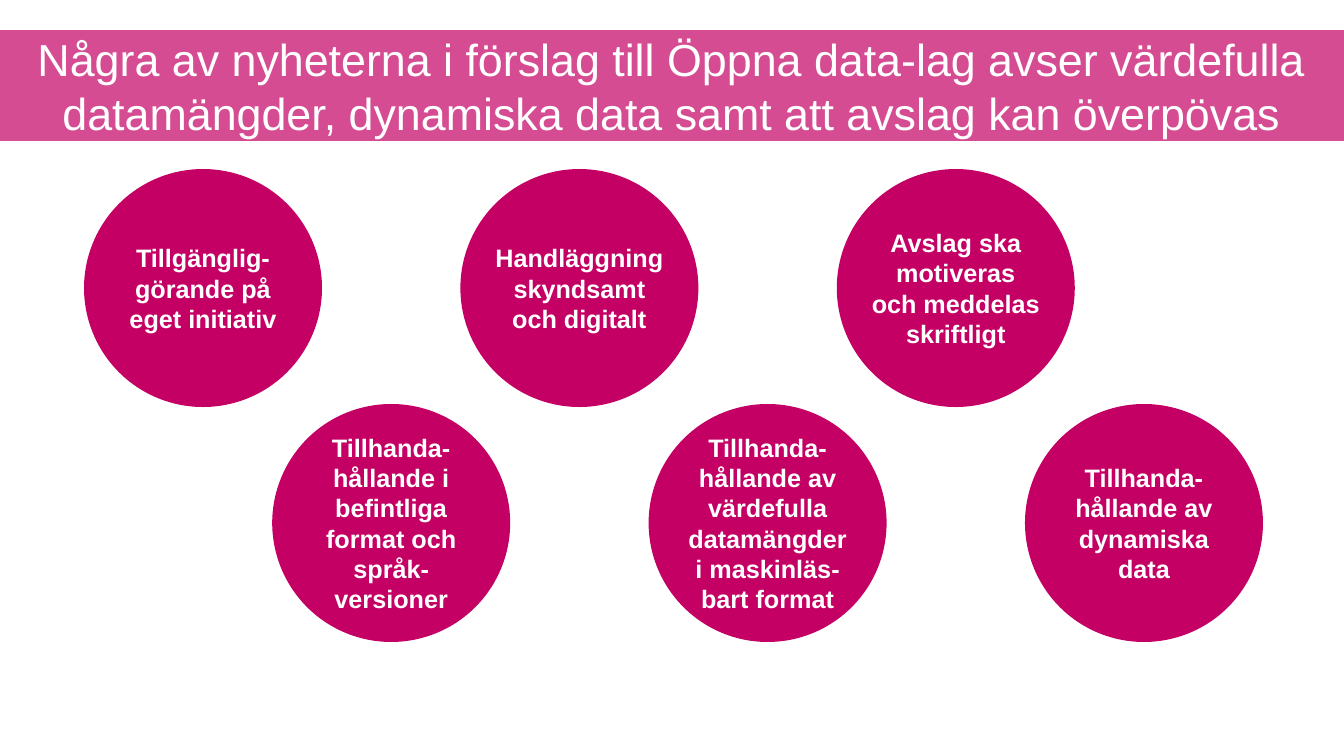
from lxml import etree
from pptx import Presentation
from pptx import util as u
from pptx.dml.color import RGBColor
from pptx.enum import shapes, text
from pptx.oxml import ns

PX = 914400 / 100.8
MAGENTA = RGBColor(0xC4, 0x00, 0x64)
WHITE = RGBColor(0xFF, 0xFF, 0xFF)

TITLE = ("Några av nyheterna i förslag till Öppna data-lag avser värdefulla "
         "datamängder, dynamiska data samt att avslag kan överpövas")

# Circles from left to right, alternating between upper and lower row
PROPOSALS = [
    "Tillgänglig-görande på eget initiativ",
    "Tillhanda-hållande i befintliga format och språk-versioner",
    "Handläggning skyndsamt och digitalt",
    "Tillhanda-hållande av värdefulla datamängder i maskinläs-bart format",
    "Avslag ska motiveras och meddelas skriftligt",
    "Tillhanda-hållande av dynamiska data",
]
ROW_TOPS = (169, 404)
DIAMETER = 238
FIRST_LEFT, LAST_LEFT = 84, 1025


def px(length):
    return u.Emu(round(length * PX))


def add_filled_shape(slide, kind, box, wording, margins, font_format):
    """Add a magenta shape with centred white text; margins are (side, top and bottom)."""
    shape = slide.shapes.add_shape(kind, *map(px, box))
    shape.shadow.inherit = False
    shape.fill.solid()
    shape.fill.fore_color.rgb = MAGENTA
    shape.line.fill.background()

    frame = shape.text_frame
    side, vertical = map(px, margins)
    frame_format = {
        "word_wrap": True,
        "vertical_anchor": text.MSO_ANCHOR.MIDDLE,
        "margin_left": side,
        "margin_right": side,
        "margin_top": vertical,
        "margin_bottom": vertical,
    }
    for name, value in frame_format.items():
        setattr(frame, name, value)

    paragraph = frame.paragraphs[0]
    paragraph.alignment = text.PP_ALIGN.CENTER
    run = paragraph.add_run()
    run.text = wording
    run.font.color.rgb = WHITE
    for name, value in {"name": "Arial", **font_format}.items():
        setattr(run.font, name, value)
    return shape


def set_opacity(shape, percent):
    color = shape.fill._xPr.find(ns.qn("a:solidFill"))[0]
    etree.SubElement(color, ns.qn("a:alpha"), val=str(percent * 1000))


def add_proposal_circle(slide, index, wording):
    left = FIRST_LEFT + (LAST_LEFT - FIRST_LEFT) * index / (len(PROPOSALS) - 1)
    box = (left, ROW_TOPS[index % 2], DIAMETER, DIAMETER)
    add_filled_shape(slide, shapes.MSO_SHAPE.OVAL, box, wording, (0, 5),
                     {"size": u.Pt(18), "bold": True})


def add_title_banner(slide):
    banner = add_filled_shape(slide, shapes.MSO_SHAPE.RECTANGLE, (-22, 29, 1388, 113),
                              TITLE, (55, 0), {"size": u.Pt(32), "bold": False})
    set_opacity(banner, 70)
    banner.line.color.rgb = WHITE
    banner.line.width = u.Pt(2)


def main():
    presentation = Presentation()
    presentation.slide_width, presentation.slide_height = px(1344), px(756)
    slide = presentation.slides.add_slide(presentation.slide_layouts[6])

    # Proposals in two staggered rows
    for index, wording in enumerate(PROPOSALS):
        add_proposal_circle(slide, index, wording)

    # Title across the full width
    add_title_banner(slide)

    presentation.save("out.pptx")


if __name__ == "__main__":
    main()
